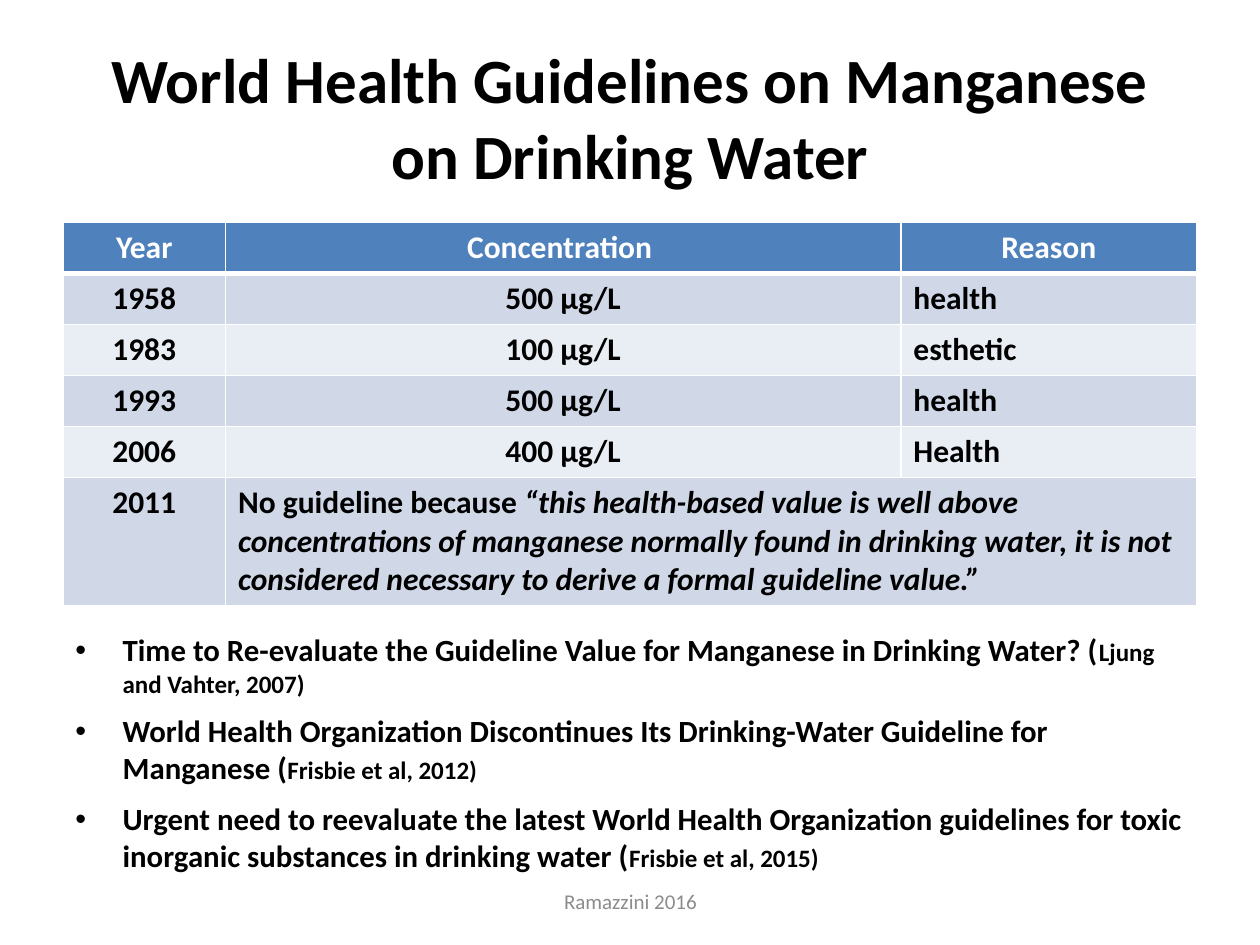
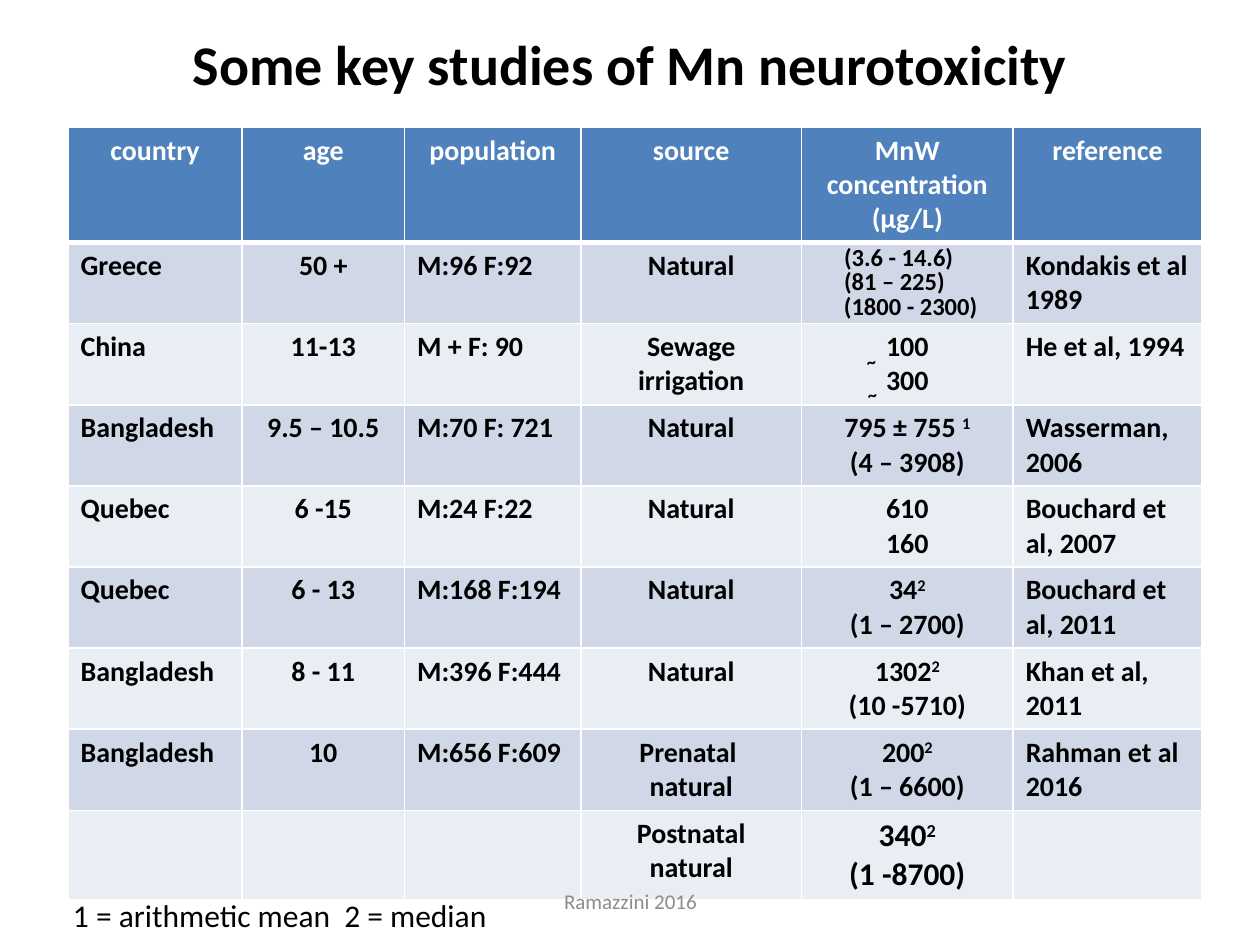
import dataclasses

import lxml.etree
import pptx
import pptx.dml.color
import pptx.enum.text
import pptx.oxml.ns
import pptx.util

Pt = pptx.util.Pt
RGB = pptx.dml.color.RGBColor.from_string
ALIGN = {"l": pptx.enum.text.PP_ALIGN.LEFT, "c": pptx.enum.text.PP_ALIGN.CENTER}
ANCHOR = pptx.enum.text.MSO_ANCHOR
AUTO = pptx.enum.text.MSO_AUTO_SIZE


@dataclasses.dataclass(frozen=True)
class Theme:
    font: str = "Calibri"
    ink: str = "000000"
    white: str = "FFFFFF"
    gray: str = "8C8C8C"
    head: str = "4F81BD"
    bands: tuple = ("D0D8E8", "E9EDF4")
    title: float = 36
    subtitle: float = 32
    large: float = 18
    bullet: float = 17.6
    cell: float = 16
    cite: float = 14.3
    range: float = 14
    foot: float = 12
    row: float = 29.2


@dataclasses.dataclass(frozen=True)
class Box:
    x: float
    y: float
    w: float
    h: float

    def pts(self):
        return [Pt(v) for v in (self.x, self.y, self.w, self.h)]


THEME = Theme()
FOOT = Box(246.2, 500.4, 228.2, 28.8)

GUIDES = [
    ("Year", "Concentration ", "Reason"),
    ("1958", "500 µg/L", "health"),
    ("1983", "100 µg/L", "esthetic"),
    ("1993", "500 µg/L", "health"),
    ("2006", "400 µg/L", "Health"),
    ("2011", "", ""),
]
QUOTE = [("No guideline because ", {}),
         ("“this health-based value is well above concentrations of manganese "
          "normally found in drinking water, it is not considered necessary to "
          "derive a formal guideline value.”", {"italic": True})]
PAPERS = [
    ("Time to Re-evaluate the Guideline Value for Manganese in Drinking Water? (",
     "Ljung and Vahter, 2007)"),
    ("World Health Organization Discontinues Its Drinking-Water Guideline for "
     "Manganese (", "Frisbie et al, 2012)"),
    ("Urgent need to reevaluate the latest World Health Organization guidelines "
     "for toxic inorganic substances in drinking water (", "Frisbie et al, 2015)"),
]
# A caret marks the superscript that ends a line
STUDIES = [
    ("country", "age", "population", "source", "MnW concentration\n(µg/L)",
     "reference"),
    ("Greece", "50 +", "M:96 F:92", "Natural", "", "Kondakis et al 1989"),
    ("China", "11-13", "M + F: 90", "Sewage irrigation", "100\n300",
     "He et al, 1994"),
    ("Bangladesh", "9.5 – 10.5", "M:70 F: 721", "Natural",
     "795 ± 755 ^1\n(4 – 3908)", "Wasserman, 2006"),
    ("Quebec", "6 -15", "M:24 F:22", "Natural", "610\n160", "Bouchard et al, 2007"),
    ("Quebec", "6 - 13", "M:168 F:194", "Natural", "34^2\n(1 – 2700)",
     "Bouchard et al, 2011"),
    ("Bangladesh", "8 - 11", "M:396 F:444", "Natural", "1302^2\n(10 -5710)",
     "Khan et al, 2011"),
    ("Bangladesh", "10", "M:656 F:609", "Prenatal \nnatural",
     "200^2\n(1 – 6600)", "Rahman et al 2016"),
    ("", "", "", "Postnatal natural", "", ""),
]
TOTAL = "340^2\n(1 -8700)"
RANGES = ["(3.6 - 14.6)", "(81 – 225)", "(1800 - 2300)"]


# Text helpers
def style(size, color=THEME.ink, bold=True):
    return {"name": THEME.font, "size": Pt(size), "bold": bold, "color": color}


def add_run(para, text, form):
    run = para.add_run()
    run.text = text
    for key, val in form.items():
        if key == "color":
            run.font.color.rgb = RGB(val)
        elif key == "base":
            run._r.get_or_add_rPr().set("baseline", str(val * 1000))
        else:
            setattr(run.font, key, val)


def parse(text):
    """Turn marked text into lines of (text, format) runs."""
    return [[(part, {"base": 30} if i else {})
             for i, part in enumerate(line.split("^"))]
            for line in text.split("\n")]


def write(frame, lines, form, align="l"):
    for i, runs in enumerate(lines):
        para = frame.add_paragraph() if i else frame.paragraphs[0]
        para.alignment = ALIGN[align]
        for text, extra in runs:
            add_run(para, text, {**form, **extra})


def add_text(slide, box, lines, form, align="l", **props):
    frame = slide.shapes.add_textbox(*box.pts()).text_frame
    for key, val in {"word_wrap": True, **props}.items():
        setattr(frame, key, val)
    write(frame, lines, form, align)
    return frame


# Shared parts
def add_title(slide, box, text, size):
    shape = slide.shapes.title
    for key, val in zip(("left", "top", "width", "height"), box.pts()):
        setattr(shape, key, val)
    frame = shape.text_frame
    for key, val in {"word_wrap": True, "auto_size": AUTO.NONE,
                     "vertical_anchor": ANCHOR.MIDDLE}.items():
        setattr(frame, key, val)
    write(frame, parse(text), style(size), "c")


def add_foot(slide, box):
    add_text(slide, box, parse("Ramazzini 2016"),
             style(THEME.foot, THEME.gray, False), "c",
             vertical_anchor=ANCHOR.MIDDLE)


def add_edge(cell, head):
    props = cell._tc.get_or_add_tcPr()
    for side in "LRTB":
        width = 3 if head and side == "B" else 1
        line = lxml.etree.SubElement(props, pptx.oxml.ns.qn(f"a:ln{side}"),
                                     w=str(Pt(width)))
        fill = lxml.etree.SubElement(line, pptx.oxml.ns.qn("a:solidFill"))
        lxml.etree.SubElement(fill, pptx.oxml.ns.qn("a:srgbClr"), val=THEME.white)


def add_grid(slide, box, rows, cols, aligns, size):
    shape = slide.shapes.add_table(len(rows), len(cols), *box.pts())
    grid = shape.table
    for col, width in zip(grid.columns, cols):
        col.width = Pt(width)
    for r, row in enumerate(rows):
        grid.rows[r].height = Pt(THEME.row)
        for c, text in enumerate(row):
            cell = grid.cell(r, c)
            add_edge(cell, r == 0)
            cell.fill.solid()
            cell.fill.fore_color.rgb = RGB(THEME.bands[(r - 1) % 2] if r else THEME.head)
            if text:
                write(cell.text_frame, parse(text),
                      style(size, THEME.ink if r else THEME.white),
                      aligns[c] if r else "c")
    shape.height = Pt(box.h)
    return grid


def add_list(slide, box, items):
    lines = [[(text, {}), (cite, {"size": Pt(THEME.cite)})] for text, cite in items]
    frame = add_text(slide, box, lines, style(THEME.bullet))
    for i, para in enumerate(frame.paragraphs):
        props = para._p.get_or_add_pPr()
        props.set("marL", str(Pt(27)))
        props.set("indent", str(Pt(-27)))
        lxml.etree.SubElement(props, pptx.oxml.ns.qn("a:buFont"), typeface="Arial")
        lxml.etree.SubElement(props, pptx.oxml.ns.qn("a:buChar"), char="•")
        para.space_before = Pt(3 if i else 0)
        para.space_after = Pt(5)


def add_notes(slide, box):
    """Loose marks over the concentration column, and the key below the table."""
    grow = {"auto_size": AUTO.SHAPE_TO_FIT_TEXT}
    for i, (text, width) in enumerate(zip(RANGES, (79, 74, 94))):
        spot = Box(box.x + 436.3, box.y + 61.9 + 14.05 * i, width, 24.2)
        add_text(slide, spot, parse(text), style(THEME.range), **grow)
    for i in range(2):
        spot = Box(box.x + 449.3 + 0.7 * i, box.y + 121.7 + 18.7 * i, 20.9, 21.6)
        add_text(slide, spot, parse("^~")[0:1], style(THEME.large),
                 word_wrap=False, **grow)
    spot = Box(box.x - 4.3, box.y + 435.6, 253.4, 29)
    add_text(slide, spot, parse("1 = arithmetic mean  2 = median"),
             style(THEME.large, bold=False), word_wrap=False, **grow)


# Slides
def guide_slide(slide):
    add_title(slide, Box(36, 21.6, 648, 90),
              "World Health Guidelines on Manganese on Drinking Water", THEME.title)
    grid = add_grid(slide, Box(36, 126.9, 648, 218), GUIDES, (92.9, 385.9, 169.2),
                    "ccl", THEME.large)
    wide = grid.cell(5, 1)
    wide.merge(grid.cell(5, 2))
    write(wide.text_frame, [QUOTE], style(THEME.large))
    add_list(slide, Box(36, 357.1, 648, 162), PAPERS)
    add_foot(slide, FOOT)


def study_slide(slide):
    add_title(slide, Box(36, 2.9, 648, 66.2),
              "Some key studies of Mn neurotoxicity", THEME.subtitle)
    box = Box(38.9, 72.7, 648, 434)
    grid = add_grid(slide, box, STUDIES, (99.4, 92.9, 100.8, 126, 121, 107.9),
                    "lclccl", THEME.cell)
    write(grid.cell(8, 4).text_frame, parse(TOTAL), style(THEME.large), "c")
    add_notes(slide, box)
    add_foot(slide, FOOT)


def main():
    deck = pptx.Presentation()
    deck.slide_width, deck.slide_height = Pt(720), Pt(540)
    for build in (guide_slide, study_slide):
        build(deck.slides.add_slide(deck.slide_layouts[5]))
    deck.save("out.pptx")


if __name__ == "__main__":
    main()
